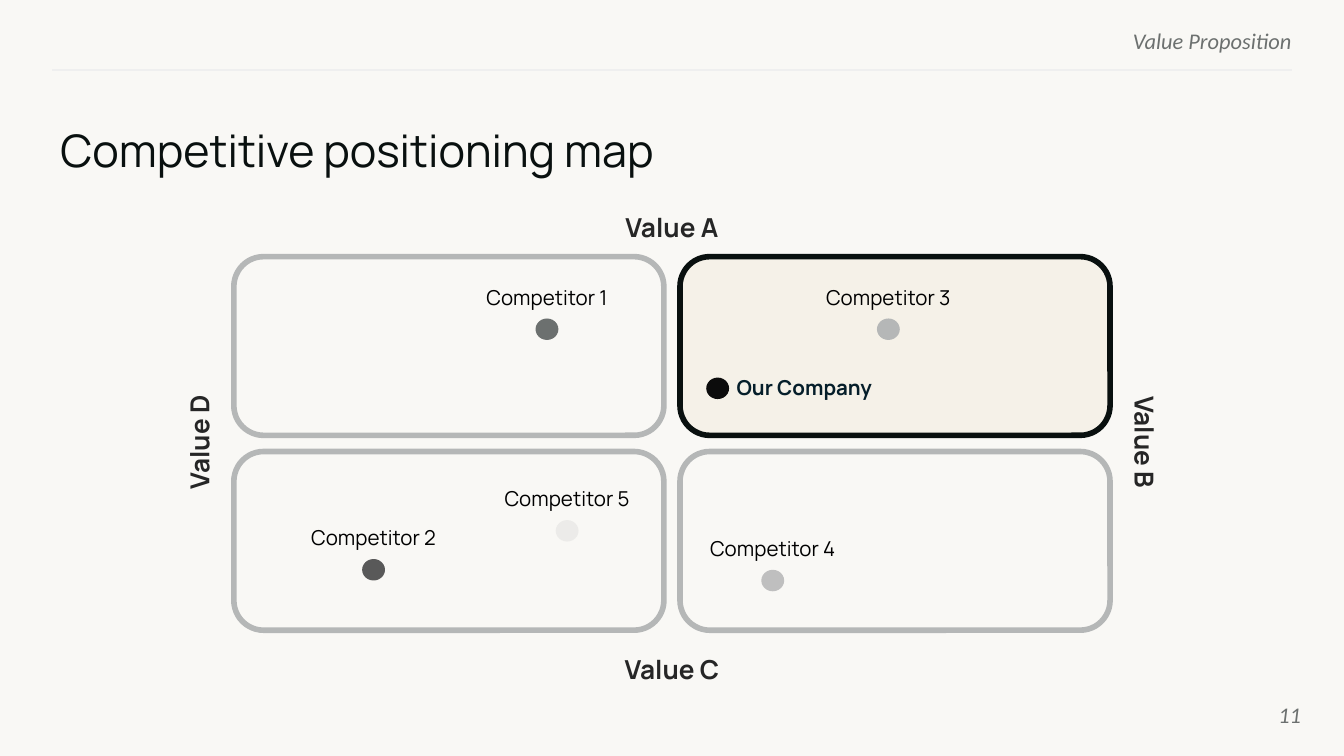
from dataclasses import dataclass
from typing import Optional

from lxml.etree import SubElement
from pptx import Presentation
from pptx.dml.color import RGBColor
from pptx.enum.shapes import MSO_CONNECTOR, MSO_SHAPE
from pptx.enum.text import MSO_ANCHOR, PP_ALIGN
from pptx.oxml.ns import qn
from pptx.util import Inches, Pt

SLIDE_W = 10
SLIDE_H = SLIDE_W * 9 / 16
COLORS = {
    "paper": "F9F8F5", "cream": "F5F1E8", "ink": "09100F", "muted": "6C706F",
    "rule": "EFEFEF", "axis": "262626", "border": "B5B7B7", "label": "000000",
    "our_label": "051E2A", "our_dot": "0C0C0C", "dark": "595959", "light": "BFBFBF",
}
HEAD_FONT, NOTE_FONT = "Manrope", "Calibri"

# Two-by-two map, in inches
CELL_W, CELL_H, GAP = 3.2, 1.33, 0.12
MAP_W, MAP_H = 2 * CELL_W + GAP, 2 * CELL_H + GAP
MAP_X, MAP_Y = (SLIDE_W - MAP_W) / 2, 1.91
MID_X, MID_Y = MAP_X + MAP_W / 2, MAP_Y + MAP_H / 2 - 0.01
DOT_W, DOT_H = 0.17, 0.16
LABEL_W, LABEL_H, LABEL_RISE = 1.07, 0.19, 0.24
AXIS_W, AXIS_H = 1.2, 0.24


@dataclass(frozen=True)
class TextStyle:
    size: int
    color: str
    font: str = HEAD_FONT
    bold: bool = False
    italic: bool = False
    align: PP_ALIGN = PP_ALIGN.CENTER
    anchor: MSO_ANCHOR = MSO_ANCHOR.MIDDLE


@dataclass(frozen=True)
class AxisLabel:
    text: str
    x: float
    y: float
    rotation: int = 0


@dataclass(frozen=True)
class Player:
    """A dot on the map; x and y lead from its cell's corner to its centre."""
    name: str
    col: int
    row: int
    x: float
    y: float
    color: str
    alpha: Optional[int] = None
    ours: bool = False


TITLE = TextStyle(24, "ink", align=PP_ALIGN.LEFT, anchor=MSO_ANCHOR.TOP)
HEADER = TextStyle(12, "muted", NOTE_FONT, italic=True, align=PP_ALIGN.RIGHT,
                   anchor=MSO_ANCHOR.TOP)
NUMBER = TextStyle(12, "muted", NOTE_FONT, italic=True, align=PP_ALIGN.RIGHT)
AXIS = TextStyle(14, "axis", bold=True)
RIVAL = TextStyle(11, "label")
OURS = TextStyle(11, "our_label", bold=True, align=PP_ALIGN.LEFT)

AXES = [
    AxisLabel("Value A", MID_X, MAP_Y - 0.22),
    AxisLabel("Value B", MAP_X + MAP_W + 0.26, MID_Y, 90),
    AxisLabel("Value C", MID_X, MAP_Y + MAP_H + 0.29),
    AxisLabel("Value D", MAP_X - 0.26, MID_Y, 270),
]
PLAYERS = [
    Player("Competitor 1", 0, 0, 2.33, 0.54, "muted"),
    Player("Competitor 2", 0, 1, 1.04, 0.88, "dark"),
    Player("Competitor 3", 1, 0, 1.55, 0.54, "border"),
    Player("Competitor 4", 1, 1, 0.69, 0.96, "light"),
    Player("Competitor 5", 0, 1, 2.48, 0.59, "light", alpha=21),
    Player("Our Company", 1, 0, 0.28, 0.98, "our_dot", ours=True),
]


def rgb(name: str) -> RGBColor:
    return RGBColor.from_string(COLORS[name])


def cell_origin(col: int, row: int) -> tuple[float, float]:
    return MAP_X + col * (CELL_W + GAP), MAP_Y + row * (CELL_H + GAP)


def add_text(slide, text: str, x: float, y: float, w: float, h: float,
             style: TextStyle, rotation: int = 0) -> None:
    sp = slide.shapes.add_textbox(*map(Inches, (x, y, w, h)))
    sp.rotation = rotation
    tf = sp.text_frame
    tf.word_wrap = True
    tf.margin_left = tf.margin_right = tf.margin_top = tf.margin_bottom = 0
    tf.vertical_anchor = style.anchor
    p = tf.paragraphs[0]
    p.text = text
    p.alignment = style.align
    p.font.name, p.font.size = style.font, Pt(style.size)
    p.font.bold, p.font.italic = style.bold, style.italic
    p.font.color.rgb = rgb(style.color)


def add_filled(slide, kind: MSO_SHAPE, x: float, y: float, w: float, h: float, fill: str):
    sp = slide.shapes.add_shape(kind, *map(Inches, (x, y, w, h)))
    sp.shadow.inherit = False
    sp.fill.solid()
    sp.fill.fore_color.rgb = rgb(fill)
    return sp


def add_rule(slide, x1: float, x2: float, y: float) -> None:
    line = slide.shapes.add_connector(MSO_CONNECTOR.STRAIGHT,
                                      *map(Inches, (x1, y, x2, y)))
    line.line.color.rgb = rgb("rule")
    line.line.width = Pt(0.75)
    SubElement(line._element.spPr, qn("a:effectLst"))


def add_quadrant(slide, col: int, row: int) -> None:
    ours = (col, row) == (1, 0)
    sp = add_filled(slide, MSO_SHAPE.ROUNDED_RECTANGLE, *cell_origin(col, row),
                    CELL_W, CELL_H, "cream" if ours else "paper")
    sp.adjustments[0] = 0.167
    sp.line.color.rgb = rgb("ink" if ours else "border")
    sp.line.width = Pt(3)


def add_player(slide, player: Player) -> None:
    left, top = cell_origin(player.col, player.row)
    x, y = left + player.x, top + player.y
    if player.ours:
        add_text(slide, player.name, x + 0.14, y - LABEL_H / 2 - 0.01, 1.29, LABEL_H, OURS)
    else:
        add_text(slide, player.name, x - LABEL_W / 2, y - LABEL_RISE - LABEL_H / 2,
                 LABEL_W, LABEL_H, RIVAL)
    dot = add_filled(slide, MSO_SHAPE.OVAL, x - DOT_W / 2, y - DOT_H / 2,
                     DOT_W, DOT_H, player.color)
    dot.line.fill.background()
    if player.alpha is not None:
        color = dot._element.spPr.find(qn("a:solidFill"))[0]
        SubElement(color, qn("a:alpha"), val=str(player.alpha * 1000))


def main() -> None:
    prs = Presentation()
    prs.slide_width, prs.slide_height = Inches(SLIDE_W), Inches(SLIDE_H)
    slide = prs.slides.add_slide(prs.slide_layouts[6])
    slide.background.fill.solid()
    slide.background.fill.fore_color.rgb = rgb("paper")

    add_text(slide, "Value Proposition", 5.76, 0.2, 3.85, 0.18, HEADER)
    add_rule(slide, 0.39, SLIDE_W - 0.39, 0.52)
    add_text(slide, "Competitive positioning map", 0.45, 0.91, 9.23, 0.51, TITLE)
    add_text(slide, "11", 9.08, 5.1, 0.6, 0.43, NUMBER)

    for col in range(2):
        for row in range(2):
            add_quadrant(slide, col, row)
    for axis in AXES:
        add_text(slide, axis.text, axis.x - AXIS_W / 2, axis.y - AXIS_H / 2,
                 AXIS_W, AXIS_H, AXIS, axis.rotation)
    for player in PLAYERS:
        add_player(slide, player)

    prs.save("out.pptx")


if __name__ == "__main__":
    main()
